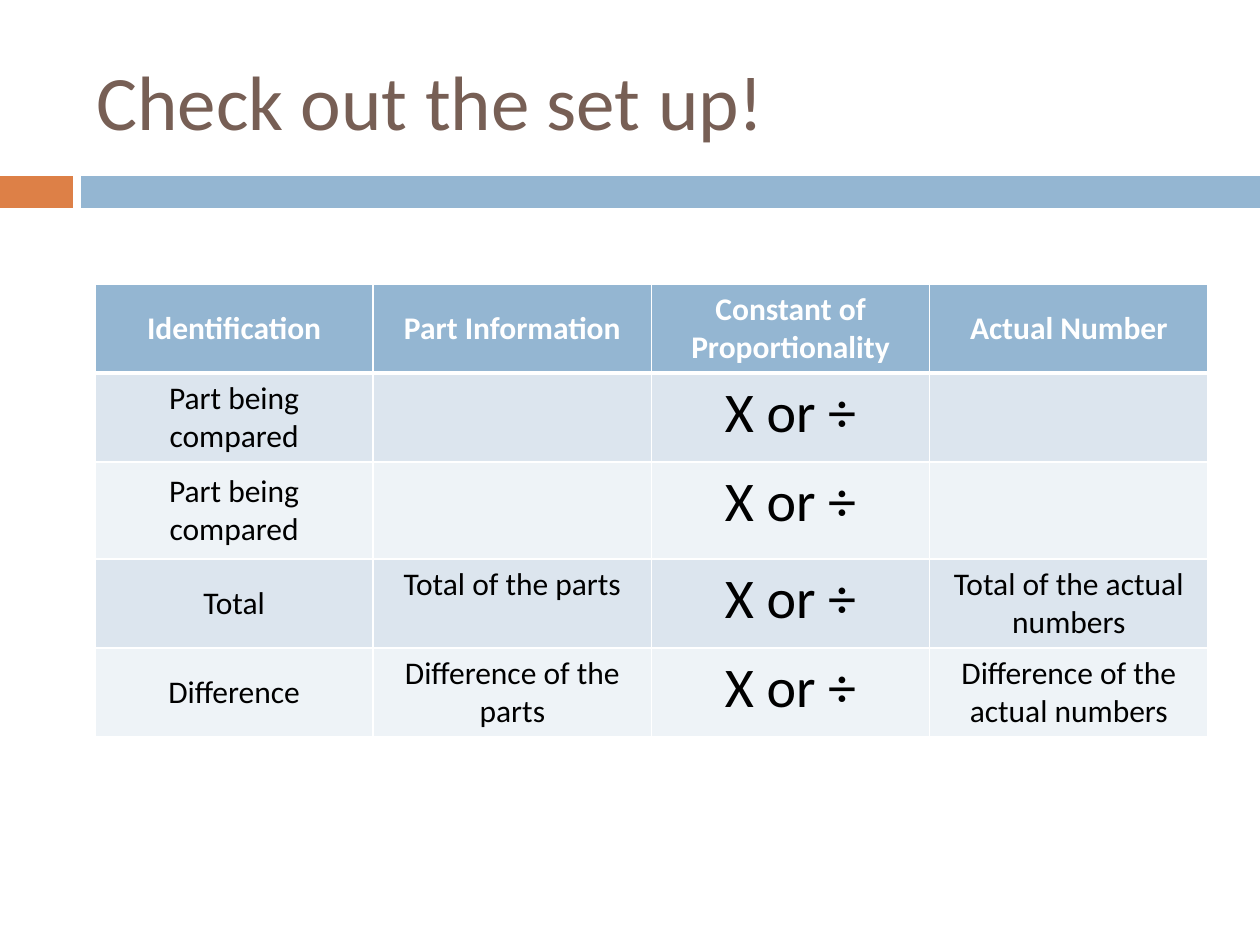
from lxml import etree
from pptx import Presentation
from pptx import util as u
from pptx.dml.color import RGBColor
from pptx.enum import shapes, text
from pptx.oxml.ns import qn

SCALE = 914400 / 126
WHITE = RGBColor(0xFF, 0xFF, 0xFF)
BLACK = RGBColor(0, 0, 0)
BROWN = RGBColor(0x77, 0x5F, 0x55)
RUST = RGBColor(0xDD, 0x80, 0x47)
BLUE = RGBColor(0x94, 0xB6, 0xD2)
BANDS = (RGBColor(0xDC, 0xE5, 0xEE), RGBColor(0xEE, 0xF3, 0xF7))

TITLE = {"name": "Calibri", "size": u.Pt(44)}
HEAD = {"name": "Calibri", "size": u.Pt(18), "bold": True}
BODY = {"name": "Calibri", "size": u.Pt(18), "bold": False}
SIGN = {**BODY, "size": u.Pt(32)}

OPTION = "X or ÷"
ROWS = [
    ("Identification", "Part Information", "Constant of Proportionality", "Actual Number"),
    ("Part being compared", "", OPTION, ""),
    ("Part being compared", "", OPTION, ""),
    ("Total", "Total of the parts", OPTION, "Total of the actual numbers"),
    ("Difference", "Difference of the parts", OPTION, "Difference of the actual numbers"),
]
HEIGHTS = (89, 89, 97, 89, 89)


def px(n):
    """Turn px into EMU."""
    return u.Emu(round(n * SCALE))


def style(font, form, ink):
    """Set a font from a dict of format values and a colour."""
    for key, value in form.items():
        setattr(font, key, value)
    font.color.rgb = ink


def edge(cell, widths):
    """Draw white borders on a cell, with widths in points by side."""
    props = cell._tc.get_or_add_tcPr()
    for spot, (side, width) in enumerate(widths.items()):
        line = etree.Element(qn(f"a:ln{side}"), w=str(u.Pt(width)))
        fill = etree.SubElement(line, qn("a:solidFill"))
        etree.SubElement(fill, qn("a:srgbClr"), val=str(WHITE))
        props.insert(spot, line)


def add_title(slide, x, y, w, h):
    """Place the heading in its box."""
    frame = slide.shapes.add_textbox(*map(px, (x, y, w, h))).text_frame
    frame.word_wrap = True
    frame.vertical_anchor = text.MSO_ANCHOR.MIDDLE
    run = frame.paragraphs[0].add_run()
    run.text = "Check out the set up!"
    style(run.font, TITLE, BROWN)


def add_band(slide, x, y, w, h):
    """Place the short and the long bar side by side across the box."""
    short, gap = 73, 8
    start = short + gap
    for left, width, ink in ((x, short, RUST), (x + start, w - start, BLUE)):
        bar = slide.shapes.add_shape(
            shapes.MSO_SHAPE.RECTANGLE, *map(px, (left, y, width, h)))
        bar.shadow.inherit = False
        bar.fill.solid()
        bar.fill.fore_color.rgb = ink
        bar.line.fill.background()


def fill_cell(cell, words, row, col):
    """Fill, border and word one cell by its place in the grid."""
    head = row == 0
    cell.fill.solid()
    cell.fill.fore_color.rgb = BLUE if head else BANDS[(row - 1) % 2]
    edge(cell, {"L": 1, "R": 1, "T": 3 if row == 1 else 1, "B": 3 if head else 1})
    mid = head or col == 0
    cell.vertical_anchor = text.MSO_ANCHOR.MIDDLE if mid else text.MSO_ANCHOR.TOP
    para = cell.text_frame.paragraphs[0]
    para.alignment = text.PP_ALIGN.CENTER
    if words:
        run = para.add_run()
        run.text = words
        form = HEAD if head else SIGN if words == OPTION else BODY
        style(run.font, form, WHITE if head else BLACK)


def add_grid(slide, x, y, w):
    """Place the table with equal columns across the given width."""
    count = len(ROWS[0])
    box = map(px, (x, y, w, sum(HEIGHTS)))
    table = slide.shapes.add_table(len(ROWS), count, *box).table
    for col in table.columns:
        col.width = px(w / count)
    for row, (words, high) in enumerate(zip(ROWS, HEIGHTS)):
        table.rows[row].height = px(high)
        for col, word in enumerate(words):
            fill_cell(table.cell(row, col), word, row, col)


def main():
    """Build and save the slide."""
    deck = Presentation()
    deck.slide_width, deck.slide_height = px(1260), px(945)
    slide = deck.slides.add_slide(deck.slide_layouts[6])
    add_band(slide, 0, 176, 1260, 32)
    add_title(slide, 84, 32, 1124, 136)
    add_grid(slide, 95, 284, 1113)
    deck.save("out.pptx")


if __name__ == "__main__":
    main()
